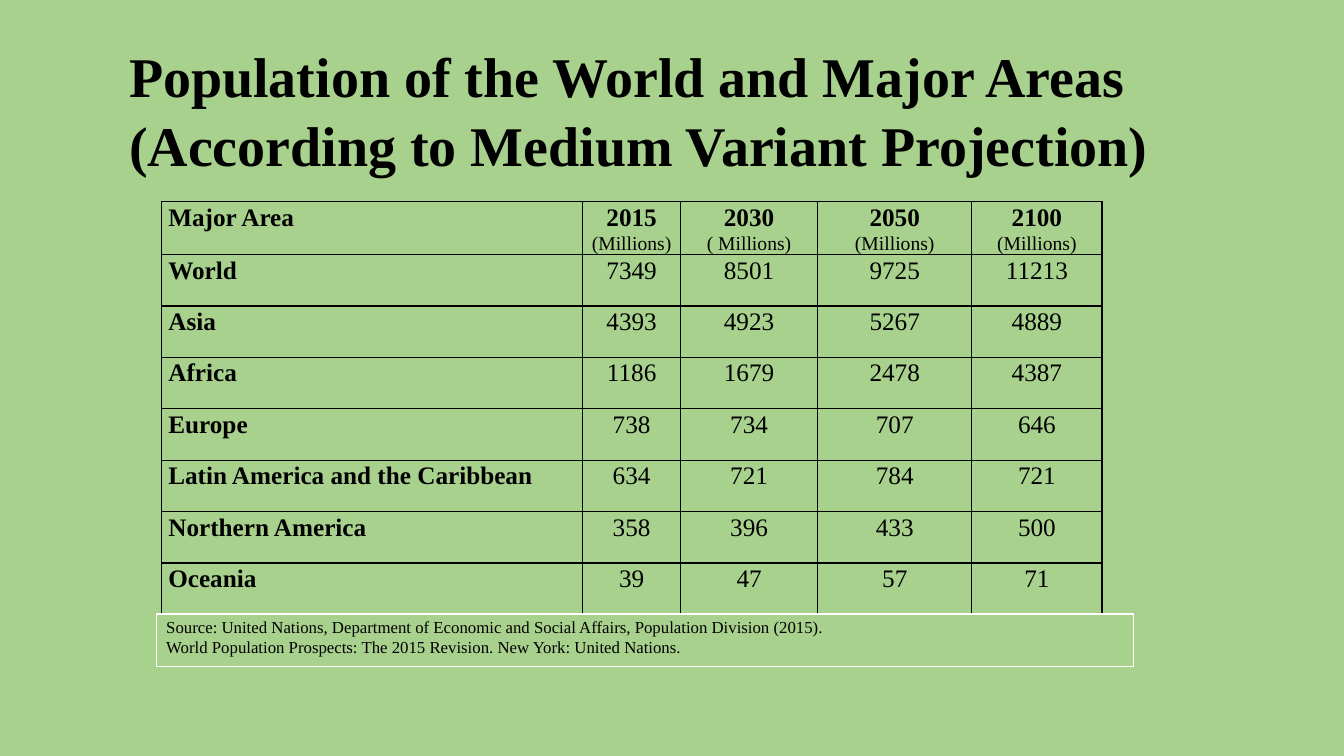
from lxml import etree
from pptx import Presentation
from pptx.dml.color import RGBColor
from pptx.enum.shapes import MSO_SHAPE
from pptx.enum.text import MSO_ANCHOR, PP_ALIGN
from pptx.oxml.ns import qn
from pptx.util import Inches, Pt

LEFT, CENTER = PP_ALIGN.LEFT, PP_ALIGN.CENTER
TOP, MIDDLE = MSO_ANCHOR.TOP, MSO_ANCHOR.MIDDLE
RECTANGLE = MSO_SHAPE.RECTANGLE
FONT = "Times New Roman"
COLORS = {"background": "A9D18E", "ink": "000000", "frame": "FFFFFF"}

TITLE = ["Population of the World and Major Areas",
         "(According to Medium Variant Projection)"]
HEADER = ["Major Area", "2015\n(Millions)", "2030\n( Millions)",
          "2050\n(Millions)", "2100\n(Millions)"]
POPULATION = [
    ("World", 7349, 8501, 9725, 11213),
    ("Asia", 4393, 4923, 5267, 4889),
    ("Africa", 1186, 1679, 2478, 4387),
    ("Europe", 738, 734, 707, 646),
    ("Latin America and the Caribbean", 634, 721, 784, 721),
    ("Northern America", 358, 396, 433, 500),
    ("Oceania", 39, 47, 57, 71),
]
SOURCE = [
    "Source: United Nations, Department of Economic and Social Affairs, Population Division (2015).",
    "World Population Prospects: The 2015 Revision. New York: United Nations.",
]
COLUMN_WIDTHS = [4.18, 0.97, 1.36, 1.53, 1.29]
ROW_HEIGHT = 0.51


def color(name):
    return RGBColor.from_string(COLORS[name])


def write(frame, lines, sizes, bolds, align=LEFT, spacing=1.0):
    """Fill a text frame with one paragraph per line."""
    frame.text = "\n".join(lines)
    for para, size, bold in zip(frame.paragraphs, sizes, bolds):
        para.alignment = align
        para.line_spacing = spacing
        para.font.name = FONT
        para.font.size = Pt(size)
        para.font.bold = bold
        para.font.color.rgb = color("ink")


def add_borders(cell):
    properties = cell._tc.get_or_add_tcPr()
    for position, side in enumerate(("a:lnL", "a:lnR", "a:lnT", "a:lnB")):
        line = etree.Element(qn(side), w=str(Pt(1)))
        fill = etree.SubElement(line, qn("a:solidFill"))
        etree.SubElement(fill, qn("a:srgbClr"), val=COLORS["ink"])
        properties.insert(position, line)


deck = Presentation()
deck.slide_width, deck.slide_height = Inches(13.33), Inches(7.5)
page = deck.slides.add_slide(deck.slide_layouts[5])
page.background.fill.solid()
page.background.fill.fore_color.rgb = color("background")

# Title
title = page.shapes.title
title.left, title.top = Inches(1.18), Inches(0.35)
title.width, title.height = Inches(10.75), Inches(1.45)
title.text_frame.vertical_anchor = MIDDLE
write(title.text_frame, TITLE, (40, 40), (True, True), spacing=1.04)

# Population table
rows = [HEADER] + POPULATION
table = page.shapes.add_table(
    len(rows), len(HEADER), Inches(1.6), Inches(2),
    Inches(sum(COLUMN_WIDTHS)), Inches(ROW_HEIGHT * len(rows))).table
for column, width in zip(table.columns, COLUMN_WIDTHS):
    column.width = Inches(width)
for row_index, values in enumerate(rows):
    for column_index, value in enumerate(values):
        cell = table.cell(row_index, column_index)
        cell.margin_left = cell.margin_right = Inches(0.07)
        cell.margin_top = cell.margin_bottom = 0
        cell.fill.background()
        heading = row_index == 0 or column_index == 0
        write(cell.text_frame, str(value).split("\n"), (18, 14), (heading, False),
              CENTER if column_index else LEFT, 1.07)
        add_borders(cell)

# Source note
note = page.shapes.add_shape(
    RECTANGLE, Inches(1.55), Inches(6.09), Inches(9.69), Inches(0.52))
note.shadow.inherit = False
note.fill.background()
note.line.color.rgb = color("frame")
note.line.width = Pt(1)
note.text_frame.word_wrap = True
note.text_frame.vertical_anchor = TOP
note.text_frame.margin_top = Inches(0.03)
write(note.text_frame, SOURCE, (12, 12), (False, False))

deck.save("out.pptx")
